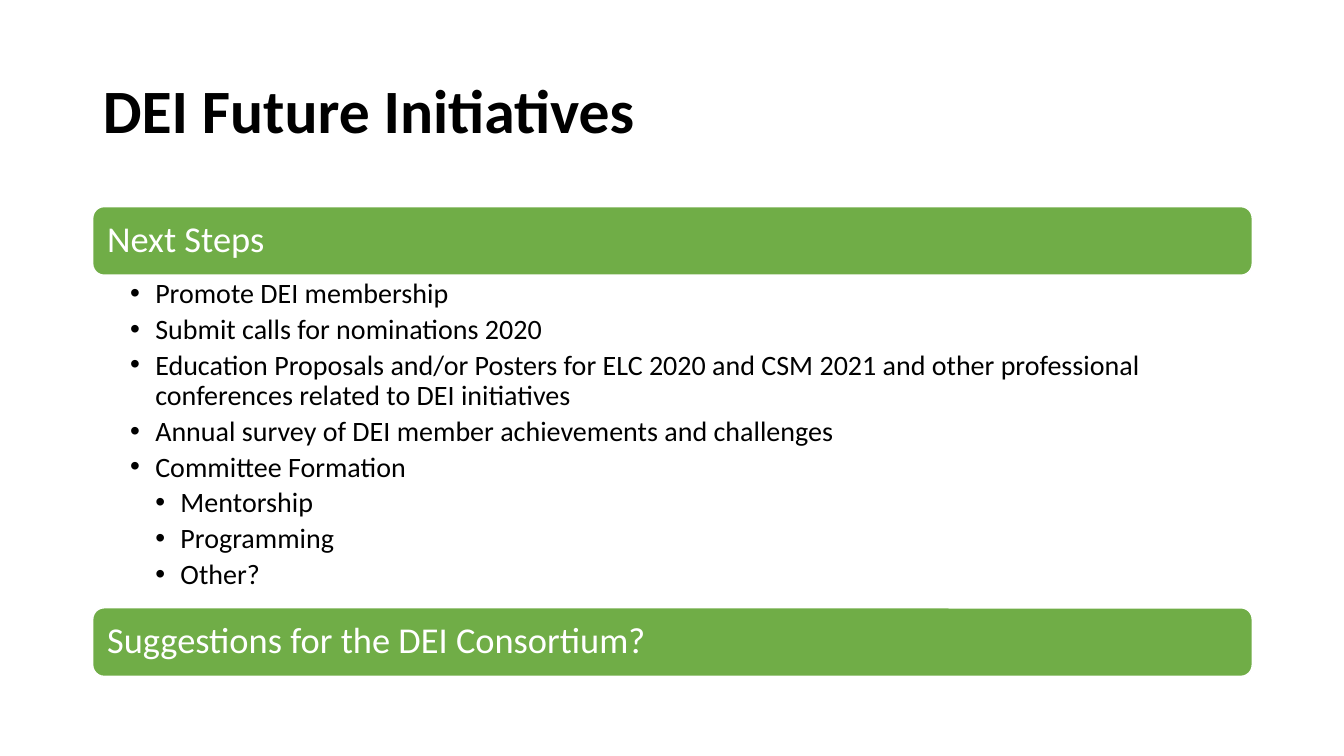
from lxml.etree import SubElement
from pptx import Presentation
from pptx.dml.color import RGBColor
from pptx.enum.shapes import MSO_SHAPE
from pptx.enum.text import MSO_ANCHOR, MSO_AUTO_SIZE, PP_ALIGN
from pptx.oxml.ns import qn
from pptx.util import Inches, Pt

GREEN = RGBColor(0x70, 0xAD, 0x47)
WHITE = RGBColor(0xFF, 0xFF, 0xFF)
BLACK = RGBColor(0x00, 0x00, 0x00)
LEFT, WIDTH, BAR_HEIGHT = 0.92, 11.5, 0.68
LIST_TOP, LIST_HEIGHT = 2.73, 3.3

NEXT_STEPS = [
    (1, "Promote DEI membership"),
    (1, "Submit calls for nominations 2020"),
    (1, "Education Proposals and/or Posters for ELC 2020 and CSM 2021 "
        "and other professional conferences related to DEI initiatives"),
    (1, "Annual survey of DEI member achievements and challenges"),
    (1, "Committee Formation"),
    (2, "Mentorship"),
    (2, "Programming"),
    (2, "Other?"),
]


class SlideBuilder:
    """Holds the current slide and its shared text style."""

    def __init__(self, slide, font_name="Calibri"):
        self.slide = slide
        self.font_name = font_name

    def place(self, shape, top, height):
        shape.left, shape.top = Inches(LEFT), Inches(top)
        shape.width, shape.height = Inches(WIDTH), Inches(height)

    def set_frame(self, text_frame, anchor, left, top, right, bottom):
        text_frame.word_wrap = True
        text_frame.auto_size = MSO_AUTO_SIZE.NONE
        text_frame.vertical_anchor = anchor
        text_frame.margin_left, text_frame.margin_top = Inches(left), Inches(top)
        text_frame.margin_right, text_frame.margin_bottom = Inches(right), Inches(bottom)

    def format_paragraph(self, paragraph, size, color, bold=False, space_after=0):
        paragraph.alignment = PP_ALIGN.LEFT
        paragraph.line_spacing = 0.9
        paragraph.space_before = Pt(0)
        paragraph.space_after = Pt(space_after)
        for run in paragraph.runs:
            run.font.name = self.font_name
            run.font.size = Pt(size)
            run.font.bold = bold
            run.font.color.rgb = color

    def title(self, text):
        shape = self.slide.shapes.title
        self.place(shape, 0.4, 1.45)
        shape.text_frame.text = text
        self.set_frame(shape.text_frame, MSO_ANCHOR.MIDDLE, 0.1, 0.05, 0.1, 0.05)
        self.format_paragraph(shape.text_frame.paragraphs[0], 44, BLACK, bold=True)

    def bar(self, text, top):
        shape = self.slide.shapes.add_shape(
            MSO_SHAPE.ROUNDED_RECTANGLE, Inches(LEFT), Inches(top),
            Inches(WIDTH), Inches(BAR_HEIGHT))
        shape.shadow.inherit = False
        shape.fill.solid()
        shape.fill.fore_color.rgb = GREEN
        shape.line.color.rgb = WHITE
        shape.line.width = Pt(1)
        shape.text_frame.text = text
        self.set_frame(shape.text_frame, MSO_ANCHOR.MIDDLE, 0.11, 0.1, 0.11, 0.1)
        self.format_paragraph(shape.text_frame.paragraphs[0], 26, WHITE)

    def bullets(self, items, top, height):
        shape = self.slide.placeholders[1]
        self.place(shape, top, height)
        text_frame = shape.text_frame
        text_frame.text = "\n".join(text for _, text in items)
        self.set_frame(text_frame, MSO_ANCHOR.TOP, 0.37, 0.04, 0.2, 0.04)
        for paragraph, (level, _) in zip(text_frame.paragraphs, items):
            paragraph.level = level
            self.format_paragraph(paragraph, 20, BLACK, space_after=4)
            properties = paragraph._p.get_or_add_pPr()
            properties.set("marL", str(Inches(0.25 * level)))
            properties.set("indent", str(Inches(-0.25)))
            SubElement(properties, qn("a:buFont"), typeface="Arial")
            SubElement(properties, qn("a:buChar"), char="•")


def main():
    presentation = Presentation()
    presentation.slide_width = Inches(13.33)
    presentation.slide_height = Inches(7.5)
    slide = presentation.slides.add_slide(presentation.slide_layouts[1])
    builder = SlideBuilder(slide)
    builder.title("DEI Future Initiatives")
    builder.bar("Next Steps", LIST_TOP - BAR_HEIGHT)
    builder.bullets(NEXT_STEPS, LIST_TOP, LIST_HEIGHT)
    builder.bar("Suggestions for the DEI Consortium?", LIST_TOP + LIST_HEIGHT)
    presentation.save("out.pptx")


if __name__ == "__main__":
    main()
